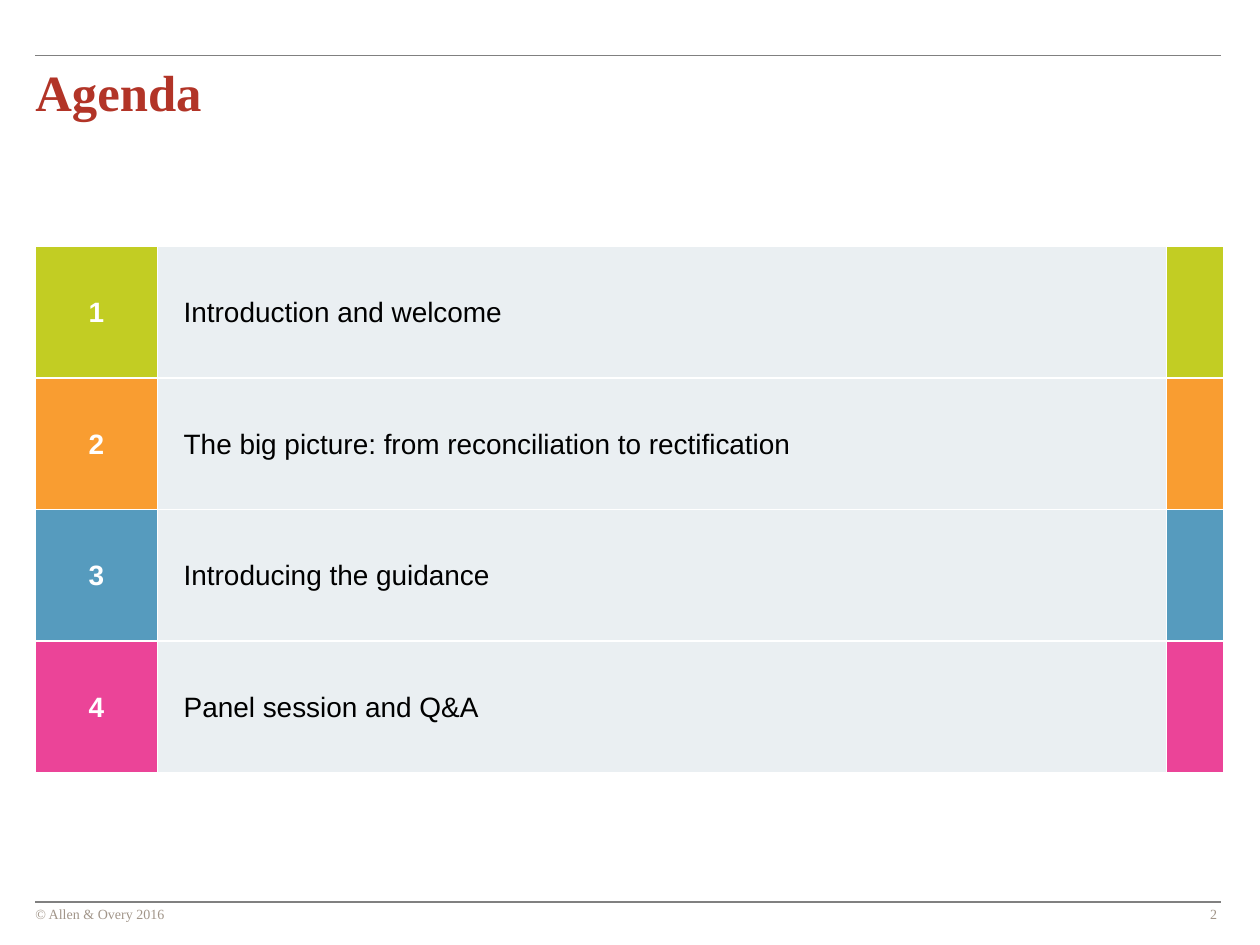
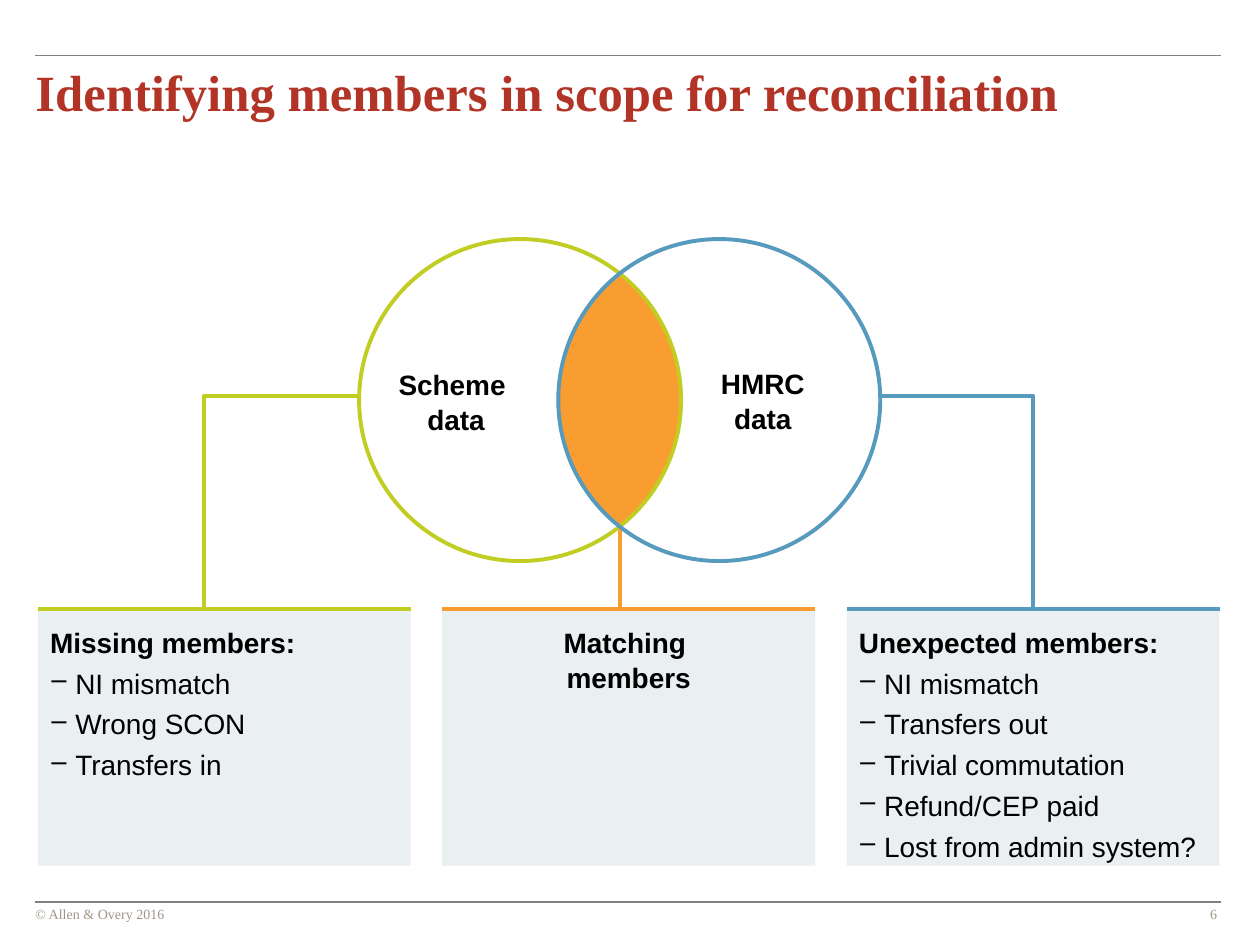
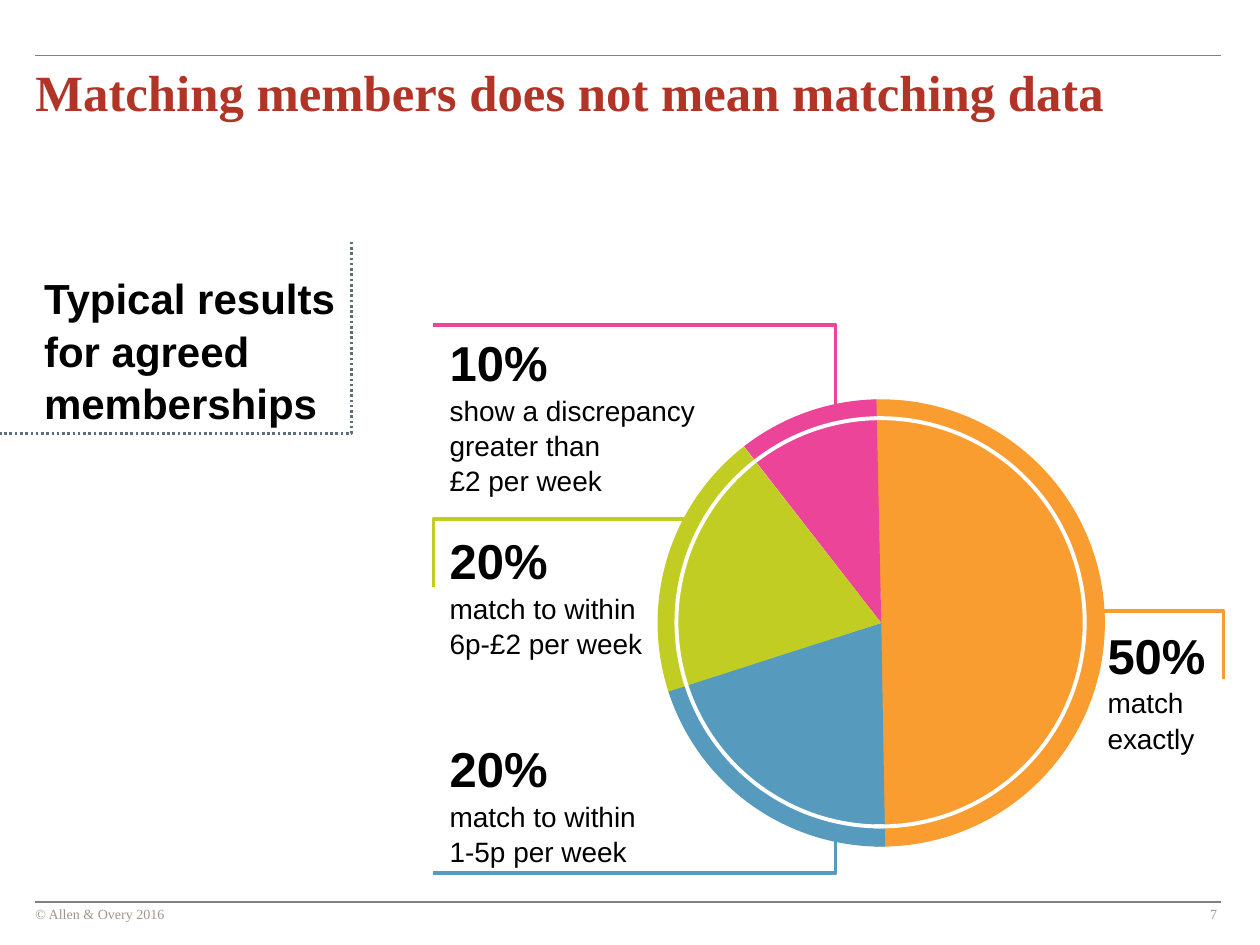
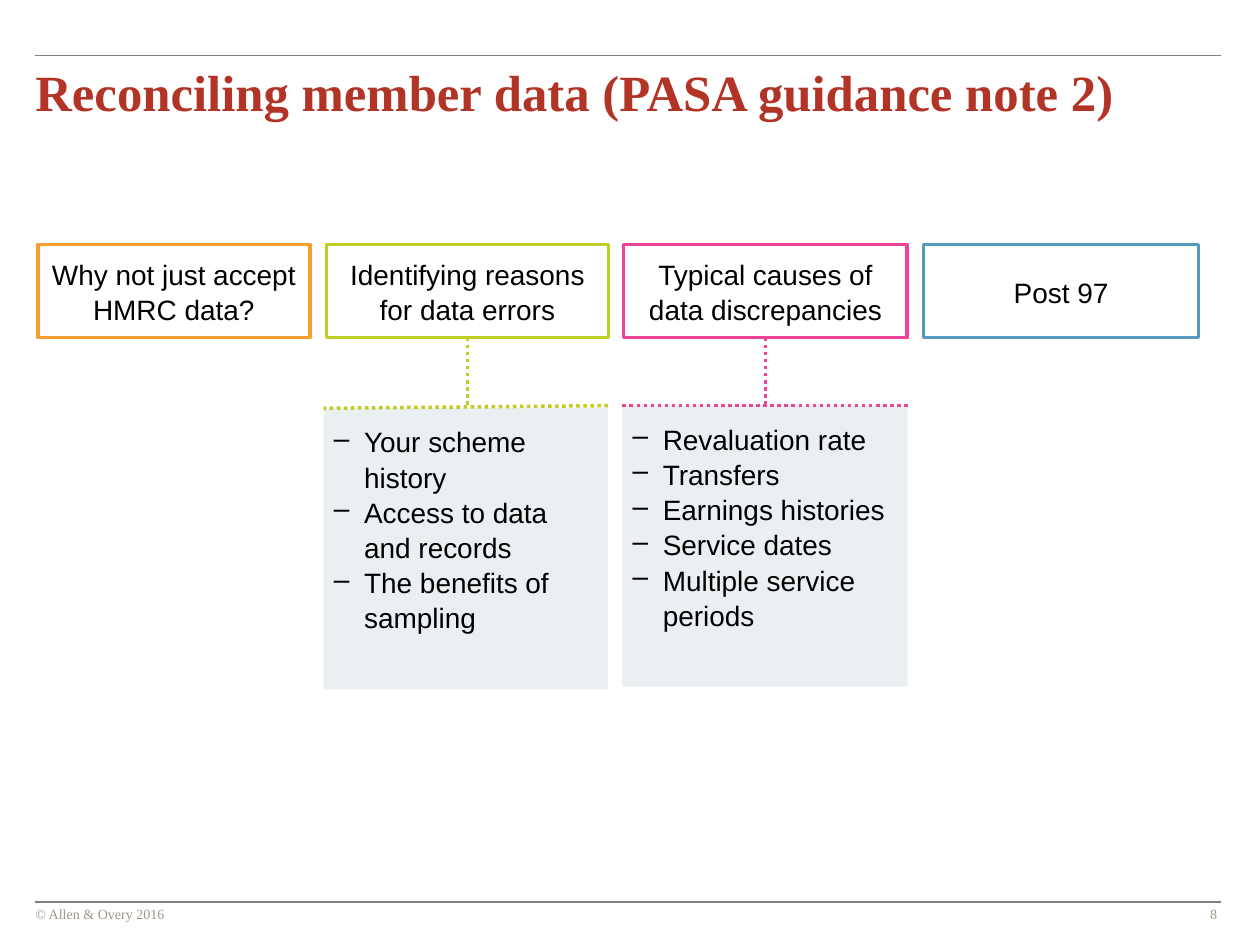
"""Build four slides on reconciling pension member data."""
from math import acos, cos, pi, sin

from lxml.etree import SubElement
from pptx import Presentation
from pptx.dml.color import RGBColor
from pptx.enum.dml import MSO_LINE
from pptx.enum.shapes import MSO_CONNECTOR, MSO_SHAPE
from pptx.enum.text import MSO_ANCHOR, PP_ALIGN
from pptx.oxml.ns import qn
from pptx.util import Pt

COLORS = {
    "lime": "C2CD23", "orange": "F99D31", "blue": "569BBE", "pink": "EB4498",
    "panel": "EAEFF1", "cell": "EAEFF2", "white": "FFFFFF", "black": "000000",
    "title": "B23427", "rule": "808080", "footer": "A19589", "slate": "5C6F7B",
}


def rgb(name):
    """Return the named colour."""
    return RGBColor.from_string(COLORS[name])


def write(paragraph, text, size=16, color="black", bold=False, font="Arial",
          align=PP_ALIGN.LEFT, spacing=1.05, before=0, bullet=None, indent=0):
    """Add formatted text to a paragraph, with a line break at each newline."""
    paragraph.alignment = align
    paragraph.line_spacing = spacing
    paragraph.space_before = Pt(before)
    if bullet:
        properties = paragraph._p.get_or_add_pPr()
        properties.set("marL", str(Pt(indent)))
        properties.set("indent", str(-Pt(indent)))
        SubElement(properties, qn("a:buChar"), char=bullet)
    for index, line in enumerate(text.split("\n")):
        if index:
            paragraph.add_line_break()
            SubElement(paragraph._p[-1], qn("a:rPr"), sz=str(size * 100))
        if line:
            run = paragraph.add_run()
            run.text = line
            run.font.size = Pt(size)
            run.font.bold = bold
            run.font.name = font
            run.font.color.rgb = rgb(color)


class Deck:
    """Hold the shared style and the current slide."""

    serif = "Times New Roman"
    left, right = 20.2, 697.7

    def __init__(self):
        """Start an empty presentation."""
        self.presentation = Presentation()
        self.presentation.slide_width = Pt(720)
        self.presentation.slide_height = Pt(540)
        self.slide = None

    def new_slide(self, title, number):
        """Add a slide with its rules, footer and title."""
        self.slide = self.presentation.slides.add_slide(self.presentation.slide_layouts[6])
        for y in (31.7, 515.5):
            self.line((self.left, y), (self.right, y), "rule", 1)
        footer = {"size": 8, "color": "footer", "font": self.serif, "spacing": 1}
        write(self.text_box(self.left, 517.7, 516.2, 9.4), "© Allen & Overy 2016", **footer)
        write(self.text_box(179.3, 517.7, 516.2, 9.4), str(number),
              align=PP_ALIGN.RIGHT, **footer)
        write(self.text_box(self.left, 33.1, 674.6, 35.3), title,
              size=29, color="title", bold=True, font=self.serif)

    def set_frame(self, frame, insets, anchor=MSO_ANCHOR.TOP, wrap=True):
        """Set the insets, anchor and wrapping of a text frame."""
        frame.margin_left, frame.margin_top, frame.margin_right, frame.margin_bottom = map(Pt, insets)
        frame.vertical_anchor = anchor
        frame.word_wrap = wrap

    def text_box(self, *box):
        """Add a text box without insets and return its first paragraph."""
        frame = self.slide.shapes.add_textbox(*map(Pt, box)).text_frame
        self.set_frame(frame, (0, 0, 0, 0))
        return frame.paragraphs[0]

    def paint(self, shape, fill=None, line=None, width=2.25, dotted=False):
        """Set the fill and outline of a shape."""
        shape.shadow.inherit = False
        if fill:
            shape.fill.solid()
            shape.fill.fore_color.rgb = rgb(fill)
        else:
            shape.fill.background()
        if line:
            self.stroke(shape.line, line, width, dotted)
        else:
            shape.line.fill.background()

    def stroke(self, line, color, width, dotted):
        """Set the colour, width and dash of a line."""
        line.color.rgb = rgb(color)
        line.width = Pt(width)
        if dotted:
            line.dash_style = MSO_LINE.ROUND_DOT

    def shape(self, kind, box, **paint):
        """Add a preset shape."""
        shape = self.slide.shapes.add_shape(kind, *map(Pt, box))
        self.paint(shape, **paint)
        return shape

    def arc(self, box, start, end, **paint):
        """Add an arc between two angles in degrees."""
        shape = self.shape(MSO_SHAPE.ARC, box, **paint)
        shape.adjustments[0] = start * 0.6
        shape.adjustments[1] = end * 0.6

    def line(self, start, end, color, width=2.25, dotted=False):
        """Add a straight line."""
        connector = self.slide.shapes.add_connector(
            MSO_CONNECTOR.STRAIGHT, *map(Pt, start + end))
        SubElement(connector._element.spPr, qn("a:effectLst"))
        self.stroke(connector.line, color, width, dotted)

    def outline(self, points, close=False, **paint):
        """Add a freeform through the given points."""
        points = [(Pt(x), Pt(y)) for x, y in points]
        builder = self.slide.shapes.build_freeform(*points[0])
        builder.add_line_segments(points[1:], close=close)
        self.paint(builder.convert_to_shape(), **paint)

    def panel(self, box, insets, heading=None, items=(), align=PP_ALIGN.LEFT, **item_format):
        """Add a pale panel with an optional heading and bulleted items."""
        frame = self.shape(MSO_SHAPE.RECTANGLE, box, fill="panel").text_frame
        self.set_frame(frame, insets)
        paragraph = frame.paragraphs[0]
        if heading:
            write(paragraph, heading, bold=True, align=align)
        for index, item in enumerate(items):
            if index or heading:
                paragraph = frame.add_paragraph()
            write(paragraph, item, **item_format)

    def table(self, left, top, widths, row_height, rows):
        """Add a table whose rows are lists of text, fill and text format."""
        frame = self.slide.shapes.add_table(
            len(rows), len(widths), Pt(left), Pt(top), Pt(sum(widths)), Pt(row_height * len(rows)))
        table = frame.table
        table.first_row = table.horz_banding = False
        for column, width in zip(table.columns, widths):
            column.width = Pt(width)
        for row_index, row in enumerate(rows):
            table.rows[row_index].height = Pt(row_height)
            for column_index, (text, fill, text_format) in enumerate(row):
                cell = table.cell(row_index, column_index)
                self.cell_borders(cell)
                cell.fill.solid()
                cell.fill.fore_color.rgb = rgb(fill)
                cell.margin_left = cell.margin_right = Pt(15.1)
                cell.margin_top = cell.margin_bottom = Pt(7.9)
                cell.vertical_anchor = MSO_ANCHOR.MIDDLE
                write(cell.text_frame.paragraphs[0], text, **text_format)

    def cell_borders(self, cell):
        """Give a cell thin white borders."""
        properties = cell._tc.get_or_add_tcPr()
        for side in ("lnL", "lnR", "lnT", "lnB"):
            border = SubElement(properties, qn(f"a:{side}"), w=str(Pt(1)))
            fill = SubElement(border, qn("a:solidFill"))
            SubElement(fill, qn("a:srgbClr"), val=COLORS["white"])


def agenda(deck):
    """Build the agenda table."""
    deck.new_slide("Agenda", 2)
    topics = [
        ("Introduction and welcome", "lime"),
        ("The big picture: from reconciliation to rectification", "orange"),
        ("Introducing the guidance", "blue"),
        ("Panel session and Q&A", "pink"),
    ]
    number_format = {"color": "white", "bold": True, "align": PP_ALIGN.CENTER}
    rows = [
        [(str(number), color, number_format), (topic, "cell", {}), ("", color, {})]
        for number, (topic, color) in enumerate(topics, 1)
    ]
    deck.table(20.4, 140.8, (69.5, 576.7, 32.4), 75.2, rows)


def members_in_scope(deck):
    """Build the two overlapping circles and their three panels."""
    deck.new_slide("Identifying members in scope for reconciliation", 6)
    radius, center_y, left_x, right_x = 92, 228.6, 297.2, 411
    middle_x = (left_x + right_x) / 2
    panel_top, panel_width, panel_step = 347.8, 213.1, 231.1
    deck.line((middle_x, 285.8), (middle_x, panel_top), "orange")

    half_angle = acos((right_x - left_x) / 2 / radius)
    steps = [half_angle * (index / 20 - 1) for index in range(41)]
    overlap = [
        (center_x + radius * cos(turn + angle), center_y + radius * sin(turn + angle))
        for center_x, turn in ((left_x, 0), (right_x, pi))
        for angle in steps
    ]
    deck.outline(overlap, close=True, fill="orange")

    circles = [
        (left_x, "Scheme \ndata", "lime", (56.9, 3.6, 130.3, 2.9)),
        (right_x, "HMRC\ndata", "blue", (56.9, 3.6, 7.2, 3.6)),
    ]
    for center_x, label, color, insets in circles:
        box = (center_x - radius, center_y - radius, 2 * radius, 2 * radius)
        frame = deck.shape(MSO_SHAPE.OVAL, box, line=color).text_frame
        deck.set_frame(frame, insets, MSO_ANCHOR.MIDDLE, wrap=False)
        write(frame.paragraphs[0], label, bold=True, align=PP_ALIGN.CENTER)

    panels = [
        ("Missing members:", "lime", PP_ALIGN.LEFT,
         ["NI mismatch", "Wrong SCON", "Transfers in"]),
        ("Matching \nmembers", "orange", PP_ALIGN.CENTER, []),
        ("Unexpected members:", "blue", PP_ALIGN.LEFT,
         ["NI mismatch", "Transfers out", "Trivial commutation",
          "Refund/CEP paid", "Lost from admin system?"]),
    ]
    for index, (heading, color, align, items) in enumerate(panels):
        left = 21.6 + index * panel_step
        deck.panel((left, panel_top, panel_width, 146.9), (7.2, 8.6, 7.2, 3.6),
                   heading, items, align, before=3.2, bullet="‒", indent=14.4)
        deck.line((left, panel_top), (left + panel_width, panel_top), color)

    for edge_x, panel_x, color in ((502, 590.4, "blue"), (204.5, 116.6, "lime")):
        deck.outline([(edge_x, 226.1), (panel_x, 226.1), (panel_x, 349)], line=color)


def matching_data(deck):
    """Build the pie of match results with its callouts."""
    deck.new_slide("Matching members does not mean matching data", 7)
    callout_left, callout_right = 247.7, 477.4
    deck.outline([(619.9, 349.2), (699.1, 349.2), (699.1, 388.1)], line="orange", width=2)

    slices = [
        ("orange", 268.17, 91.77), ("blue", 89, 162.46),
        ("pink", 232.14, 268.76), ("lime", 162.13, 232.06),
    ]
    for color, start, end in slices:
        deck.arc((375.8, 228.2, 255.6, 255.6), start, end, fill=color)

    write(deck.text_box(25.2, 154.1, 170.6, 87.1),
          "Typical results for agreed memberships", size=24, bold=True)
    results = [
        ((632.9, 355.7, 64.8, 72.7), "50%", "match \nexactly"),
        ((257, 420.5, 223.2, 72.7), "20%", "match to within \n1-5p per week"),
        ((257, 301.7, 112.3, 72.7), "20%", "match to within \n6p-£2 per week"),
        ((257, 188.6, 146.2, 92.2), "10%", "show a discrepancy \ngreater than \n£2 per week"),
    ]
    for box, share, meaning in results:
        paragraph = deck.text_box(*box)
        write(paragraph, share + "\n", size=28, bold=True)
        write(paragraph, meaning)

    for color, pie_y, corner_y in (("pink", 308.9, 185.8), ("blue", 375.8, 499)):
        deck.outline([(callout_right, pie_y), (callout_right, corner_y), (callout_left, corner_y)],
                     line=color, width=2)
    deck.outline([(411.1, 296.6), (callout_left, 296.6), (callout_left, 335.5)],
                 line="lime", width=2)
    deck.outline([(200.9, 138.2), (200.9, 247.7), (0, 247.7)],
                 line="slate", width=1.5, dotted=True)
    for _, start, end in slices:
        deck.arc((386.6, 239, 233.3, 233.3), start, end, line="white")


def reconciling_data(deck):
    """Build the four topics and the two lists below them."""
    deck.new_slide("Reconciling member data (PASA guidance note 2)", 8)
    topics = [
        (21.6, 155.5, "Why not just accept HMRC data?", "orange"),
        (186.5, 161.3, "Identifying reasons for data errors", "lime"),
        (356.4, 162, "Typical causes of data discrepancies", "pink"),
        (527.8, 157, "Post 97", "blue"),
    ]
    for left, width, topic, color in topics:
        frame = deck.shape(MSO_SHAPE.RECTANGLE, (left, 139.7, width, 53.3),
                           line=color, width=2).text_frame
        deck.set_frame(frame, (7.2, 3.6, 7.2, 3.6), MSO_ANCHOR.MIDDLE)
        write(frame.paragraphs[0], topic, align=PP_ALIGN.CENTER)

    details = [
        (185, 233.3, 162.4, 267.1, "lime",
         ["Your scheme history", "Access to data \nand records", "The benefits of sampling"]),
        (355.7, 231.8, 163, 437.4, "pink",
         ["Revaluation rate", "Transfers", "Earnings histories",
          "Service dates", "Multiple service periods"]),
    ]
    for left, top, width, stem_x, color, items in details:
        deck.panel((left, top, width, 160.6), (5.8, 8.6, 5.8, 5.8),
                   items=items, bullet="–", indent=17.3)
        deck.line((stem_x, 193), (stem_x, 231.8), color, 2, dotted=True)
        deck.line((left + width, 231.8), (left, top), color, 2, dotted=True)


def main():
    """Build and save the presentation."""
    deck = Deck()
    for build in (agenda, members_in_scope, matching_data, reconciling_data):
        build(deck)
    deck.presentation.save("out.pptx")


if __name__ == "__main__":
    main()
